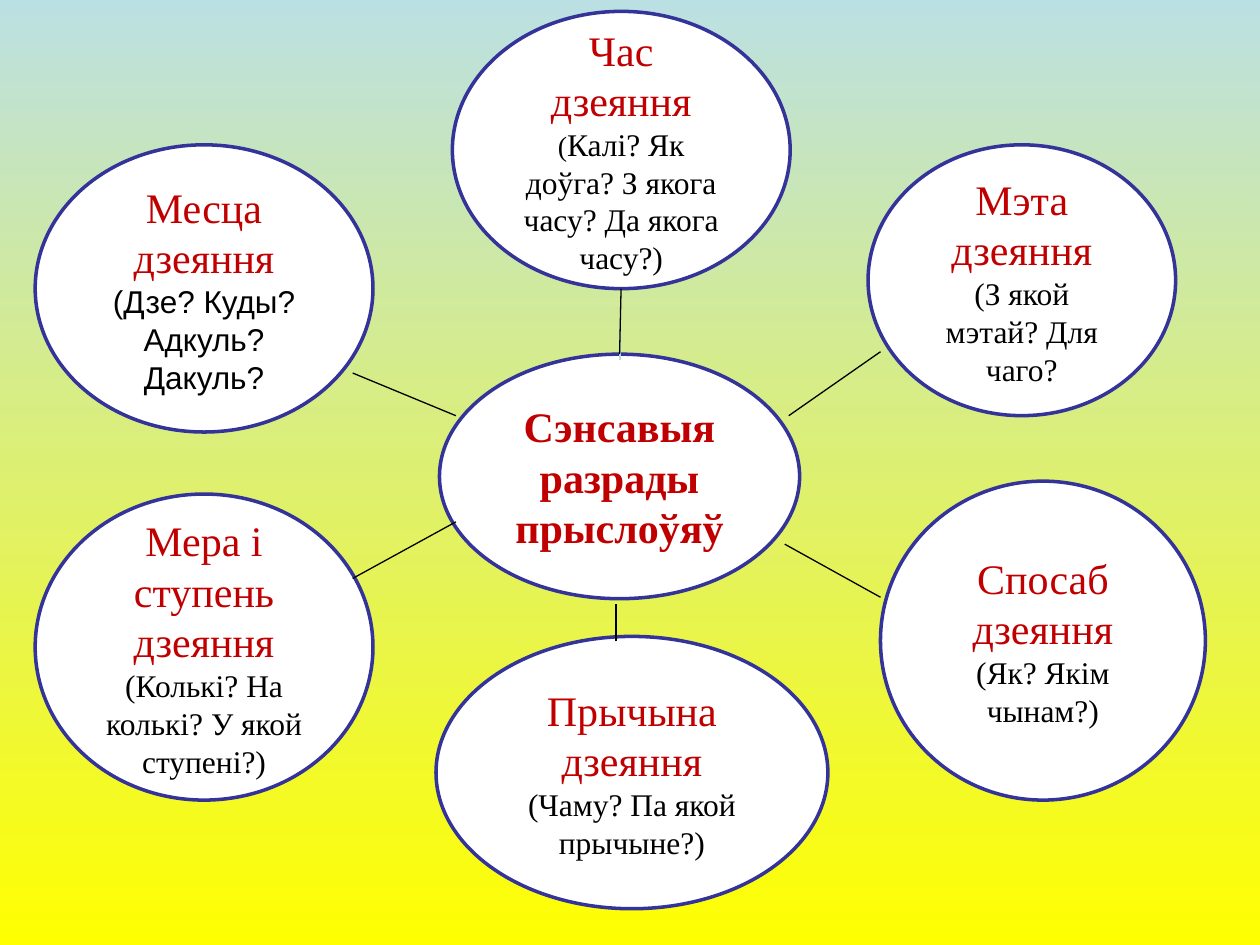
from lxml import etree
from pptx import Presentation
from pptx.dml.color import RGBColor
from pptx.enum.shapes import MSO_CONNECTOR, MSO_SHAPE
from pptx.enum.text import MSO_ANCHOR, PP_ALIGN
from pptx.oxml.ns import qn
from pptx.util import Cm, Pt

ELLIPSE = MSO_SHAPE.OVAL
STRAIGHT = MSO_CONNECTOR.STRAIGHT
MIDDLE = MSO_ANCHOR.MIDDLE
CENTER = PP_ALIGN.CENTER

BLACK = RGBColor(0x00, 0x00, 0x00)
WHITE = RGBColor(0xFF, 0xFF, 0xFF)
RED = RGBColor(0xC0, 0x00, 0x00)
NAVY = RGBColor(0x33, 0x33, 0x99)
SKY = RGBColor(0xBB, 0xE0, 0xE3)
PALE = RGBColor(0xB6, 0xDC, 0xDF)
YELLOW = RGBColor(0xFF, 0xFF, 0x00)

SERIF = "Times New Roman"
SANS = "Arial"
TOP = 0

CENTRE = (8.86, 7.14, 7.26, 4.93)
TIME = (9.12, 0.23, 6.81, 5.59)
CATEGORIES = [
    ((17.5, 2.92, 6.2, 5.46), ["Мэта дзеяння"], "(З якой мэтай? Для чаго?", SERIF),
    ((17.75, 9.7, 6.55, 6.43), ["Спосаб", "дзеяння"], "(Як? Якім чынам?)", SERIF),
    ((8.79, 12.83, 7.9, 5.49), ["Прычына дзеяння"], "(Чаму? Па якой прычыне?)", SERIF),
    ((0.71, 9.96, 6.81, 6.17), ["Мера і ступень", "дзеяння"],
     "(Колькі? На колькі? У якой ступені?)", SERIF),
    ((0.71, 2.92, 6.81, 5.79), ["Месца дзеяння"], "(Дзе? Куды? Адкуль? Дакуль?", SANS),
]
SPOKES = [
    ((7.11, 7.52), (9.19, 8.38), BLACK),
    ((7.11, 11.66), (9.19, 10.52), BLACK),
    ((12.42, 12.93), (12.42, 12.17), BLACK),
    ((15.82, 10.97), (17.75, 12.04), BLACK),
    ((15.9, 8.38), (17.75, 7.09), BLACK),
    ((12.5, 6.53), (12.5, 7.26), PALE),
]


def add_span(para, text, *, size=18, font=SERIF, color=BLACK, bold=False):
    span = para.add_run()
    span.text = text
    span.font.size = Pt(size)
    span.font.name = font
    span.font.color.rgb = color
    span.font.bold = bold


class Diagram:
    def __init__(self, page):
        self.page = page
        self.outline = Pt(2)
        self.thin = Pt(0.75)

    def background(self, upper, lower):
        fill = self.page.background.fill
        fill.gradient()
        fill.gradient_angle = 270
        for stop, color in zip(fill.gradient_stops, (upper, lower)):
            stop.color.rgb = color

    def bubble(self, place, heading, spans=(), bold=False):
        box = self.page.shapes.add_shape(ELLIPSE, *map(Cm, place))
        box.shadow.inherit = False
        box.fill.solid()
        box.fill.fore_color.rgb = WHITE
        box.line.color.rgb = NAVY
        box.line.width = self.outline
        frame = box.text_frame
        frame.word_wrap = True
        frame.vertical_anchor = MIDDLE
        for index, text in enumerate(heading):
            para = frame.add_paragraph() if index else frame.paragraphs[0]
            add_span(para, text, size=24, color=RED, bold=bold)
        if spans:
            para = frame.add_paragraph()
            for text, style in spans:
                add_span(para, text, **style)
        for para in frame.paragraphs:
            para.alignment = CENTER
        return box

    def spoke(self, start, end, color=BLACK):
        line = self.page.shapes.add_connector(STRAIGHT, *map(Cm, start + end))
        line.line.color.rgb = color
        line.line.width = self.thin
        etree.SubElement(line._element.spPr, qn("a:effectLst"))
        return line


def main():
    deck = Presentation()
    deck.slide_width, deck.slide_height = Cm(25.4), Cm(19.05)
    diagram = Diagram(deck.slides.add_slide(deck.slide_layouts[6]))
    diagram.background(SKY, YELLOW)

    centre = diagram.bubble(CENTRE, ["Сэнсавыя разрады прыслоўяў"], bold=True)
    diagram.bubble(TIME, ["Час", "дзеяння"], [
        ("(", {"size": 16}),
        ("Калі? Як доўга? З якога часу? Да якога часу?)", {}),
    ])
    for place, heading, questions, font in CATEGORIES:
        diagram.bubble(place, heading, [(questions, {"font": font})])

    for start, end, color in SPOKES:
        diagram.spoke(start, end, color)
    diagram.spoke((12.52, 5.82), (12.49, 7.14)).end_connect(centre, TOP)

    deck.save("out.pptx")


if __name__ == "__main__":
    main()
